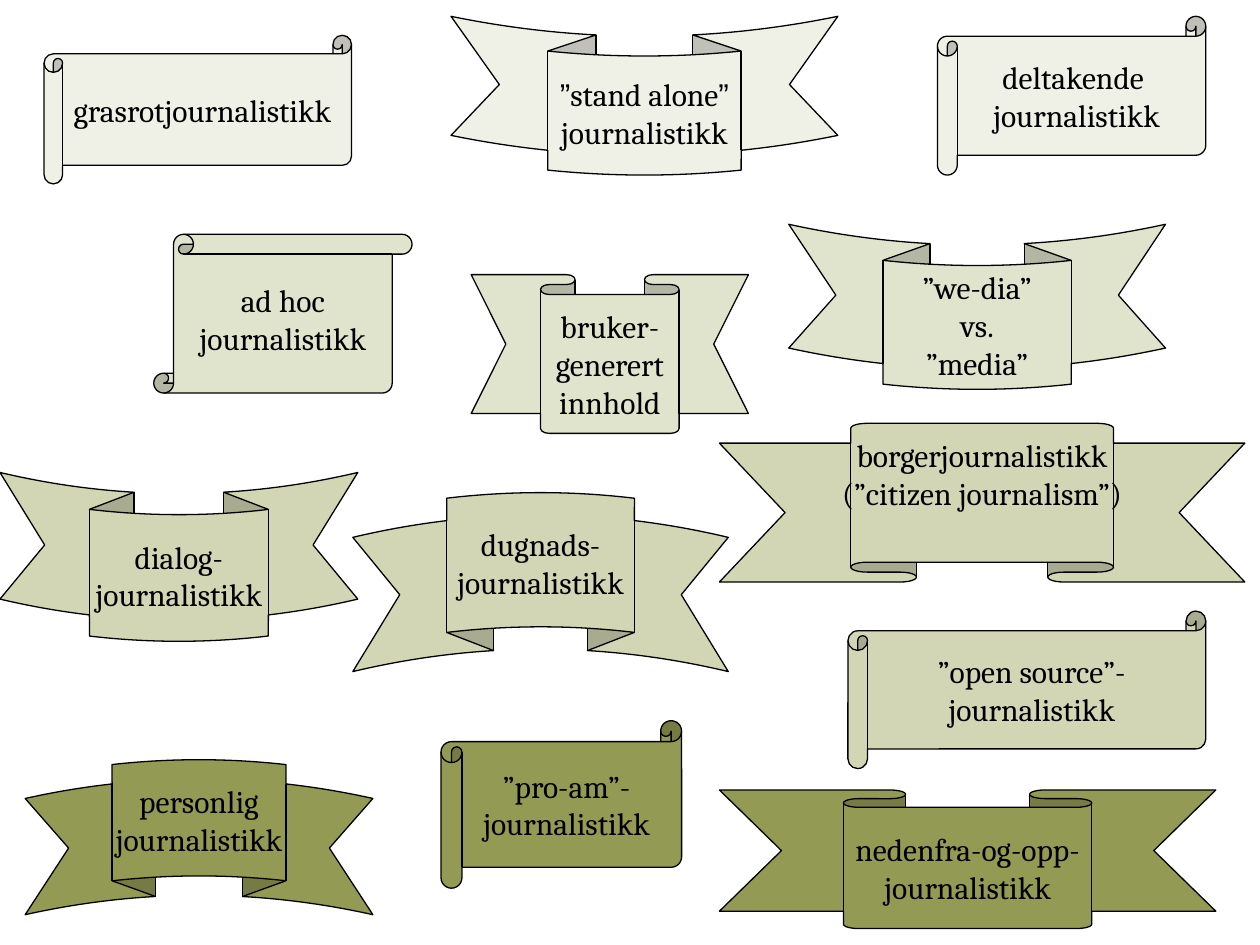
from dataclasses import dataclass
from itertools import groupby

from pptx import Presentation
from pptx.dml.color import RGBColor
from pptx.enum.shapes import MSO_SHAPE
from pptx.enum.text import MSO_ANCHOR, PP_ALIGN
from pptx.slide import Slide
from pptx.util import Inches, Pt


@dataclass(frozen=True)
class Theme:
    ink: RGBColor = RGBColor.from_string("000000")
    pale: RGBColor = RGBColor.from_string("F0F1E6")
    light: RGBColor = RGBColor.from_string("E1E4CD")
    medium: RGBColor = RGBColor.from_string("D3D6B5")
    dark: RGBColor = RGBColor.from_string("939A54")
    outline: Pt = Pt(0.75)
    size: Pt = Pt(18)
    font: str = "Cambria"
    quote_font: str = "Arial"


@dataclass(frozen=True)
class Banner:
    label: str
    form: MSO_SHAPE
    fill: RGBColor
    left: float
    top: float
    width: float
    height: float
    bottom_inset: float = 0.05
    separate_quotes: bool = False


THEME = Theme()
SCROLL = MSO_SHAPE.HORIZONTAL_SCROLL
UPRIGHT_SCROLL = MSO_SHAPE.VERTICAL_SCROLL
RIBBON = MSO_SHAPE.DOWN_RIBBON
RAISED_RIBBON = MSO_SHAPE.UP_RIBBON
CURVED = MSO_SHAPE.CURVED_DOWN_RIBBON
RAISED_CURVED = MSO_SHAPE.CURVED_UP_RIBBON

BANNERS = (
    Banner("grasrotjournalistikk", SCROLL, THEME.pale, 0.35, 0.28, 2.44, 1.18),
    Banner("ad hoc\njournalistikk", UPRIGHT_SCROLL, THEME.light, 1.22, 1.86, 2.05, 1.26),
    Banner("”stand alone”\njournalistikk", CURVED, THEME.pale, 3.58, 0.13, 3.07, 1.26,
           separate_quotes=True),
    Banner("personlig\njournalistikk", RAISED_CURVED, THEME.dark, 0.2, 6.03, 2.76, 1.23),
    Banner("nedenfra-og-opp-\njournalistikk", RIBBON, THEME.dark, 5.71, 6.27, 3.94, 1.1),
    Banner("deltakende \njournalistikk", SCROLL, THEME.pale, 7.44, 0.13, 2.13, 1.26),
    Banner("dialog-\njournalistikk", CURVED, THEME.medium, 0, 3.75, 2.84, 1.34),
    Banner("”pro-am”-\njournalistikk", SCROLL, THEME.dark, 3.5, 5.72, 1.91, 1.33),
    Banner("bruker-\ngenerert\ninnhold", RIBBON, THEME.light, 3.74, 2.18, 2.2, 1.26),
    Banner("dugnads-\njournalistikk", RAISED_CURVED, THEME.medium, 2.8, 3.91, 2.98, 1.42),
    Banner("”open source”-\njournalistikk", SCROLL, THEME.medium, 6.73, 4.85, 2.84, 1.25),
    Banner("”we-dia”\nvs.\n”media”", CURVED, THEME.light, 6.26, 1.78, 2.99, 1.31),
    Banner("borgerjournalistikk\n(”citizen journalism”)", RAISED_RIBBON, THEME.medium,
           5.71, 3.36, 4.17, 1.26, bottom_inset=0.35),
)


def is_quote(character: str) -> bool:
    return character == "”"


def write_label(banner: Banner, frame) -> None:
    frame.word_wrap = False
    frame.vertical_anchor = MSO_ANCHOR.MIDDLE
    frame.margin_bottom = Inches(banner.bottom_inset)
    frame.text = banner.label
    for line in frame.paragraphs:
        line.alignment = PP_ALIGN.CENTER
        if banner.separate_quotes:
            pieces = ["".join(group) for _, group in groupby(line.text, is_quote)]
            line.text = pieces[0]
            for piece in pieces[1:]:
                line.add_run().text = piece
        for run in line.runs:
            run.font.name = THEME.quote_font if run.text == "”" else THEME.font
            run.font.size = THEME.size
            run.font.color.rgb = THEME.ink


def draw_banner(slide: Slide, banner: Banner) -> None:
    bounds = (banner.left, banner.top, banner.width, banner.height)
    ribbon = slide.shapes.add_shape(banner.form, *map(Inches, bounds))
    if banner.form in (RIBBON, RAISED_RIBBON):
        ribbon.adjustments[0] = 0.125
    ribbon.shadow.inherit = False
    ribbon.fill.solid()
    ribbon.fill.fore_color.rgb = banner.fill
    ribbon.line.color.rgb = THEME.ink
    ribbon.line.width = THEME.outline
    write_label(banner, ribbon.text_frame)


def main() -> None:
    """Build the slide of names for participatory journalism."""
    presentation = Presentation()
    presentation.slide_width = Inches(10)
    presentation.slide_height = Inches(7.5)
    slide = presentation.slides.add_slide(presentation.slide_layouts[6])
    for banner in BANNERS:
        draw_banner(slide, banner)
    presentation.save("out.pptx")


if __name__ == "__main__":
    main()
